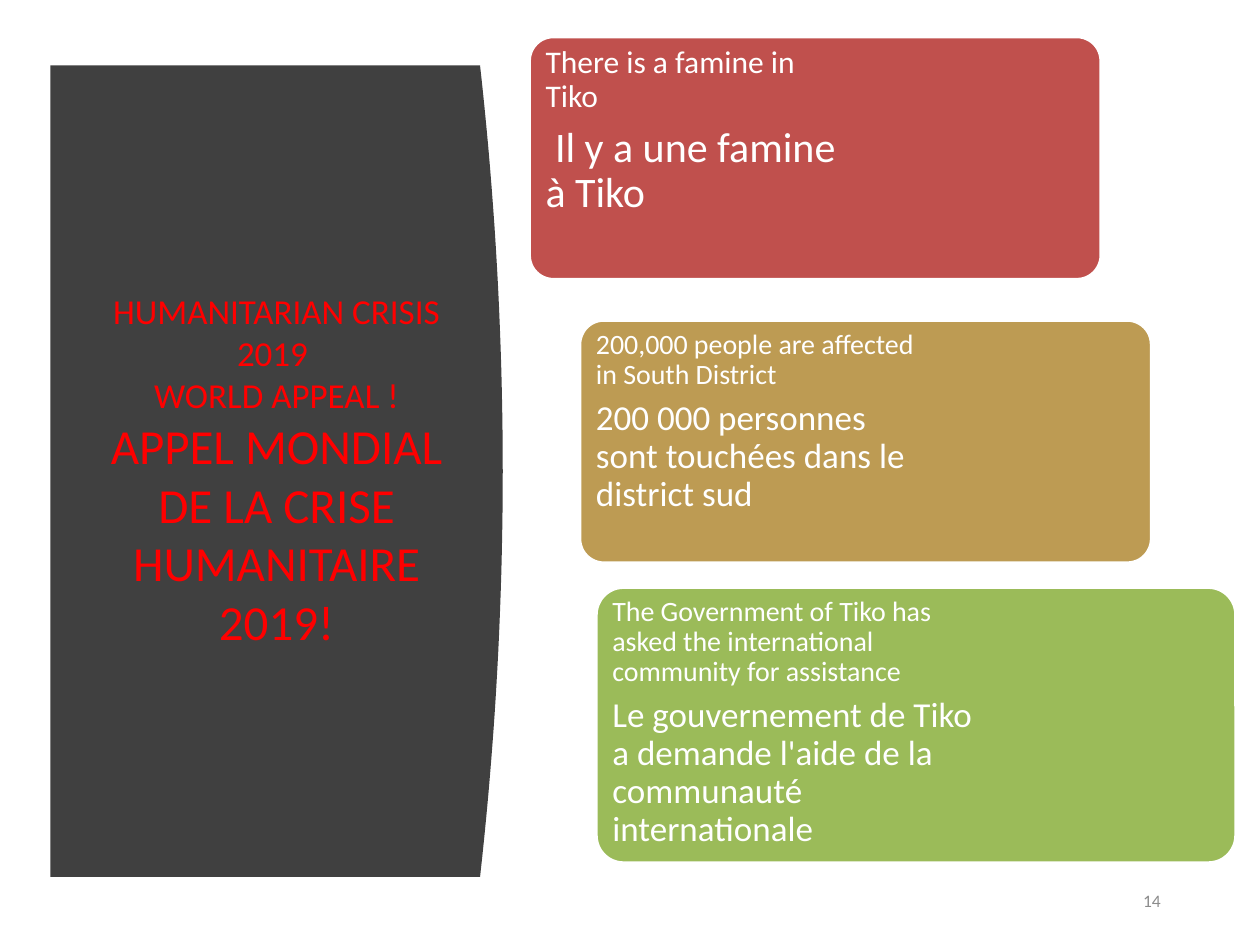
from dataclasses import dataclass

import pptx
import pptx.dml.color
import pptx.enum.shapes
import pptx.enum.text
import pptx.util

Inches = pptx.util.Inches
Pt = pptx.util.Pt
RGB = pptx.dml.color.RGBColor.from_string
ALIGN = pptx.enum.text.PP_ALIGN
ANCHOR = pptx.enum.text.MSO_ANCHOR


@dataclass(frozen=True)
class Theme:
    font: str = "Calibri"
    panel: str = "404040"
    title: str = "FF0000"
    white: str = "FFFFFF"
    number: str = "8C8C8C"
    famine: str = "C0504D"
    affected: str = "BD9B53"
    appeal: str = "9BBB59"
    title_english: int = 20
    title_french: int = 28
    number_size: int = 10


THEME = Theme()

# Card box, text width, colour, (English, size), (French, size)
CARDS = [
    ((4.2, 0.29, 4.54, 1.93), 2.46, THEME.famine,
     ("There is a famine in Tiko", 18),
     (" Il y a une famine à Tiko", 24)),
    ((4.6, 2.54, 4.54, 1.93), 2.77, THEME.affected,
     ("200,000 people are affected in South District", 16),
     ("200 000 personnes sont touchées dans le district sud", 20)),
    ((4.73, 4.66, 5.08, 2.19), 3.1, THEME.appeal,
     ("The Government of Tiko has asked the international community "
      "for assistance", 16),
     ("Le gouvernement de Tiko a demande l'aide de la communauté "
      "internationale", 20)),
]


def add_run(paragraph, text, size, colour):
    run = paragraph.add_run()
    run.text = text
    run.font.name = THEME.font
    run.font.size = Pt(size)
    run.font.color.rgb = RGB(colour)


def add_panel(slide, box):
    """Dark panel whose right side bulges outwards as a parabola."""
    left, top, width, height = box
    bulge, steps = 0.18, 40
    edge = left + width - bulge
    side = [(edge + bulge * 4 * t * (1 - t), top + height * t)
            for t in (step / steps for step in range(steps + 1))]
    outline = slide.shapes.build_freeform(Inches(left), Inches(top))
    outline.add_line_segments(
        [(Inches(x), Inches(y)) for x, y in side + [(left, top + height)]])
    panel = outline.convert_to_shape()
    panel.shadow.inherit = False
    panel.fill.solid()
    panel.fill.fore_color.rgb = RGB(THEME.panel)
    panel.line.fill.background()
    slide.shapes.title.element.addprevious(panel.element)


def set_title(slide, box):
    title = slide.shapes.title
    title.left, title.top, title.width, title.height = map(Inches, box)
    frame = title.text_frame
    frame.word_wrap = True
    frame.auto_size = pptx.enum.text.MSO_AUTO_SIZE.NONE
    frame.vertical_anchor = ANCHOR.MIDDLE
    heading = frame.paragraphs[0]
    heading.alignment = ALIGN.CENTER
    add_run(heading, "HUMANITARIAN CRISIS 2019 ", THEME.title_english, THEME.title)
    heading.add_line_break()
    add_run(heading, "WORLD APPEAL ! ", THEME.title_english, THEME.title)
    add_run(heading, "APPEL MONDIAL DE LA CRISE HUMANITAIRE 2019!",
            THEME.title_french, THEME.title)


def add_card(slide, box, text_width, colour, english, french):
    left, top, width, height = box
    card = slide.shapes.add_shape(
        pptx.enum.shapes.MSO_SHAPE.ROUNDED_RECTANGLE, *map(Inches, box))
    card.adjustments[0] = 0.1
    card.shadow.inherit = False
    card.fill.solid()
    card.fill.fore_color.rgb = RGB(colour)
    card.line.color.rgb = RGB(THEME.white)
    card.line.width = Pt(2)

    gap = 0.06
    message = slide.shapes.add_textbox(
        Inches(left + gap), Inches(top + gap),
        Inches(text_width), Inches(height - 2 * gap))
    frame = message.text_frame
    frame.word_wrap = True
    frame.vertical_anchor = ANCHOR.TOP
    frame.margin_left = frame.margin_right = Inches(0.07)
    frame.margin_top = frame.margin_bottom = Inches(0.02)
    for index, (text, size) in enumerate((english, french)):
        line = frame.add_paragraph() if index else frame.paragraphs[0]
        line.line_spacing = 0.9
        line.space_after = Pt(size * 0.35)
        add_run(line, text, size, THEME.white)


def add_slide_number(slide, box, number):
    corner = slide.shapes.add_textbox(*map(Inches, box))
    frame = corner.text_frame
    frame.word_wrap = True
    frame.vertical_anchor = ANCHOR.MIDDLE
    line = frame.paragraphs[0]
    line.alignment = ALIGN.RIGHT
    add_run(line, number, THEME.number_size, THEME.number)


def main():
    prs = pptx.Presentation()
    prs.slide_width, prs.slide_height = Inches(10), Inches(7.5)
    slide = prs.slides.add_slide(prs.slide_layouts.get_by_name("Title Only"))
    add_panel(slide, (0.4, 0.52, 3.59, 6.44))
    set_title(slide, (0.71, 1.11, 2.97, 5.24))
    add_slide_number(slide, (8.8, 6.95, 0.51, 0.4), "14")
    for card in CARDS:
        add_card(slide, *card)
    prs.save("out.pptx")


if __name__ == "__main__":
    main()
